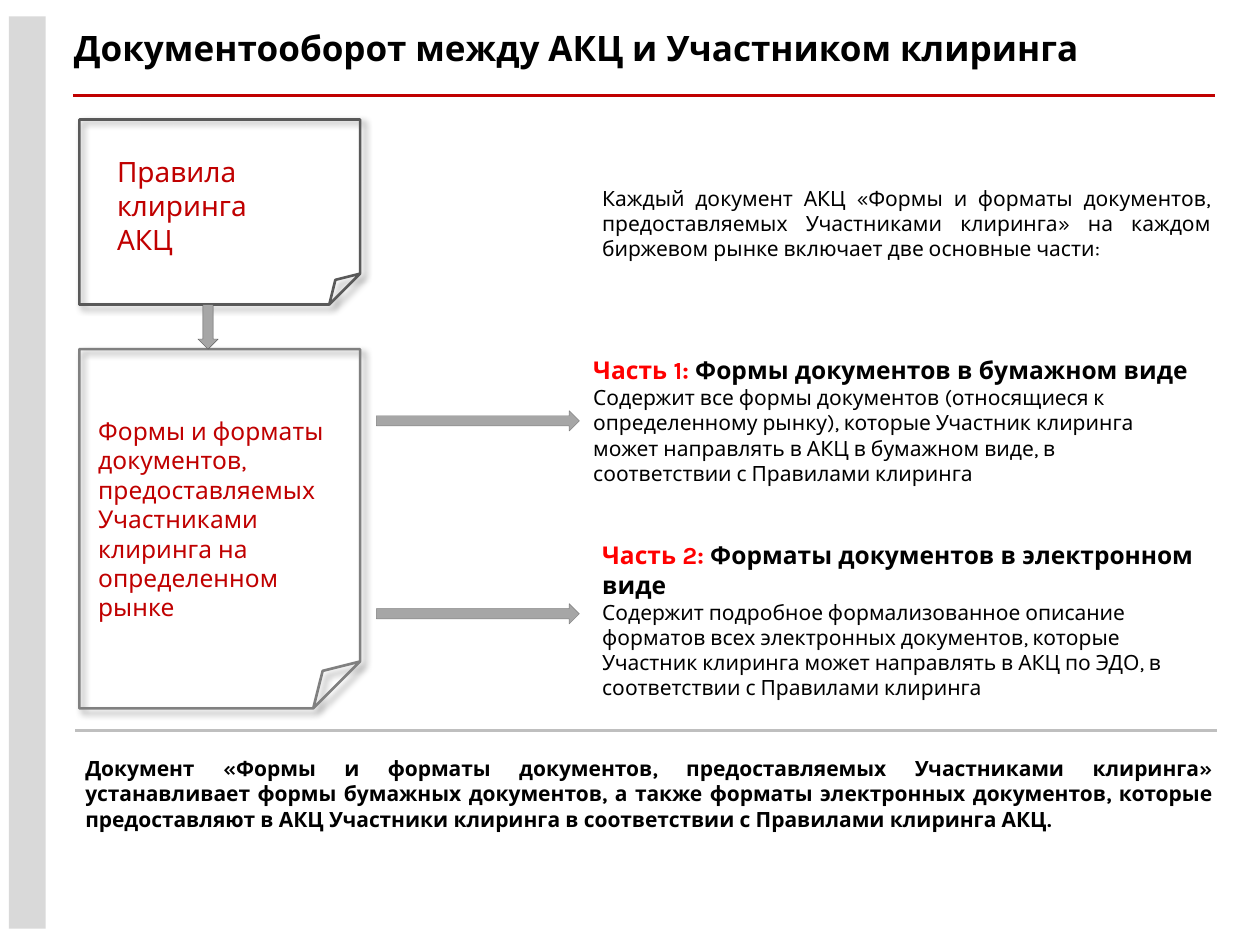
from lxml import etree
from pptx import Presentation
from pptx.dml.color import RGBColor
from pptx.enum.shapes import MSO_CONNECTOR, MSO_SHAPE
from pptx.enum.text import MSO_AUTO_SIZE, PP_ALIGN
from pptx.oxml import parse_xml
from pptx.oxml.ns import nsdecls, qn
from pptx.util import Cm, Pt

FONT = "Karla"
BLACK = RGBColor(0x00, 0x00, 0x00)
RED = RGBColor(0xFF, 0x00, 0x00)
DARK_RED = RGBColor(0xC0, 0x00, 0x00)
DARK_GREY = RGBColor(0x59, 0x59, 0x59)
MID_GREY = RGBColor(0x80, 0x80, 0x80)
ARROW_GREY = RGBColor(0xA6, 0xA6, 0xA6)
RULE_GREY = RGBColor(0xBF, 0xBF, 0xBF)
BAR_GREY = RGBColor(0xD9, 0xD9, 0xD9)

SHEET_SHADOW = (
    f'<a:effectLst {nsdecls("a")}>'
    '<a:outerShdw blurRad="50800" dist="38100" dir="2700000" algn="tl" rotWithShape="0">'
    '<a:srgbClr val="000000"><a:alpha val="40000"/></a:srgbClr>'
    '</a:outerShdw></a:effectLst>'
)


def add_text(slide, box, paragraphs, size, color=BLACK, bold=False, align=None):
    frame = slide.shapes.add_textbox(*map(Cm, box)).text_frame
    frame.word_wrap = True
    frame.auto_size = MSO_AUTO_SIZE.SHAPE_TO_FIT_TEXT
    for index, words in enumerate(paragraphs):
        paragraph = frame.paragraphs[0] if index == 0 else frame.add_paragraph()
        paragraph.text = words
        paragraph.alignment = align
        set_font(paragraph.font, size, color, bold)
    return frame


def set_font(font, size, color, bold):
    font.name = FONT
    font.size = Pt(size)
    font.bold = bold
    font.color.rgb = color


def add_rule(slide, left, top, width, color):
    rule = slide.shapes.add_connector(
        MSO_CONNECTOR.STRAIGHT, Cm(left), Cm(top), Cm(left + width), Cm(top))
    rule.line.color.rgb = color
    rule.line.width = Pt(1.5)
    etree.SubElement(rule._element.spPr, qn("a:effectLst"))


def add_arrow(slide, kind, box, outline):
    arrow = slide.shapes.add_shape(kind, *map(Cm, box))
    arrow.shadow.inherit = False
    arrow.fill.solid()
    arrow.fill.fore_color.rgb = ARROW_GREY
    arrow.line.color.rgb = outline
    arrow.line.width = Pt(0.25)


def add_side_bar(slide, box):
    bar = slide.shapes.add_shape(MSO_SHAPE.RECTANGLE, *map(Cm, box))
    bar.shadow.inherit = False
    bar.fill.solid()
    bar.fill.fore_color.rgb = BAR_GREY
    bar.line.fill.background()


def add_header(slide, box):
    left, top, width, height = box
    add_text(slide, box, ["Документооборот между АКЦ и Участником клиринга"], 20, bold=True)
    add_rule(slide, left + 0.23, top + 1.52, width - 0.22, DARK_RED)


def add_sheet(slide, box, outline, label_box, label, size):
    """Folded sheet; label_box is measured from the sheet's top left corner."""
    left, top, width, height = box
    sheet = slide.shapes.add_shape(MSO_SHAPE.FOLDED_CORNER, *map(Cm, box))
    sheet.fill.background()
    sheet.line.color.rgb = outline
    sheet.line.width = Pt(1.5)
    sheet._element.spPr.append(parse_xml(SHEET_SHADOW))
    dx, dy, label_width, label_height = label_box
    add_text(slide, (left + dx, top + dy, label_width, label_height), label, size, DARK_RED)


def add_part(slide, box, number, heading, description, arrow_left, arrow_drop):
    """Numbered part with the arrow that leads to it, arrow_drop below its top."""
    frame = add_text(slide, box, ["", description], 12)
    title = frame.paragraphs[0]
    set_font(title.font, 14, BLACK, True)
    number_run = title.add_run()
    number_run.text = number
    number_run.font.color.rgb = RED
    title.add_run().text = f" {heading}"
    add_arrow(slide, MSO_SHAPE.RIGHT_ARROW,
              (arrow_left, box[1] + arrow_drop, 4.09, 0.41), MID_GREY)


def add_sheet_column(slide, left, top, width):
    rules_height, gap, forms_height = 3.73, 0.9, 7.24
    add_sheet(slide, (left, top, width, rules_height), DARK_GREY,
              (0.51, 0.59, 4.17, 2.31), ["Правила клиринга", "АКЦ"], 16)
    add_sheet(slide, (left, top + rules_height + gap, width, forms_height), MID_GREY,
              (0.13, 1.22, 5.36, 3.84),
              ["Формы и форматы документов, предоставляемых Участниками клиринга "
               "на определенном рынке"], 14)
    add_arrow(slide, MSO_SHAPE.DOWN_ARROW,
              (left + 2.39, top + rules_height, 0.41, gap), DARK_GREY)


def add_parts_column(slide, left, top):
    add_text(slide, (left, top, 12.78, 1.8),
             ["Каждый документ АКЦ «Формы и форматы документов, предоставляемых "
              "Участниками клиринга» на каждом биржевом рынке включает две "
              "основные части:"], 12, align=PP_ALIGN.JUSTIFY)
    arrow_left = left - 4.3
    add_part(slide, (left - 0.18, top + 3.43, 12.6, 2.9), "Часть 1:",
             "Формы документов в бумажном виде",
             "Содержит все формы документов (относящиеся к определенному рынку), "
             "которые Участник клиринга может направлять в АКЦ в бумажном виде, "
             "в соответствии с Правилами клиринга", arrow_left, 1.24)
    add_part(slide, (left, top + 7.16, 12.6, 3.51), "Часть 2:",
             "Форматы документов в электронном виде",
             "Содержит подробное формализованное описание форматов всех электронных "
             "документов, которые Участник клиринга может направлять в АКЦ по ЭДО, "
             "в соответствии с Правилами клиринга", arrow_left, 1.4)


def add_summary(slide, box):
    left, top, width, height = box
    add_rule(slide, left + 0.05, top - 0.38, width - 0.22, RULE_GREY)
    frame = add_text(
        slide, box,
        ["Документ «Формы и форматы документов, предоставляемых Участниками клиринга» "
         "устанавливает формы бумажных документов, а также форматы электронных "
         "документов, которые предоставляют в АКЦ Участники клиринга в соответствии "
         "с Правилами клиринга АКЦ."], 12, bold=True, align=PP_ALIGN.JUSTIFY)
    frame.paragraphs[0].space_after = Pt(6)


def main():
    deck = Presentation()
    deck.slide_width, deck.slide_height = Cm(25.4), Cm(19.05)
    slide = deck.slides.add_slide(deck.slide_layouts[6])
    add_side_bar(slide, (0.18, 0.33, 0.74, 18.39))
    add_header(slide, (1.24, 0.41, 23.24, 1.12))
    add_sheet_column(slide, 1.6, 2.41, 5.66)
    add_parts_column(slide, 11.89, 3.61)
    add_summary(slide, (1.47, 15.11, 23.24, 1.8))
    deck.save("out.pptx")


if __name__ == "__main__":
    main()
